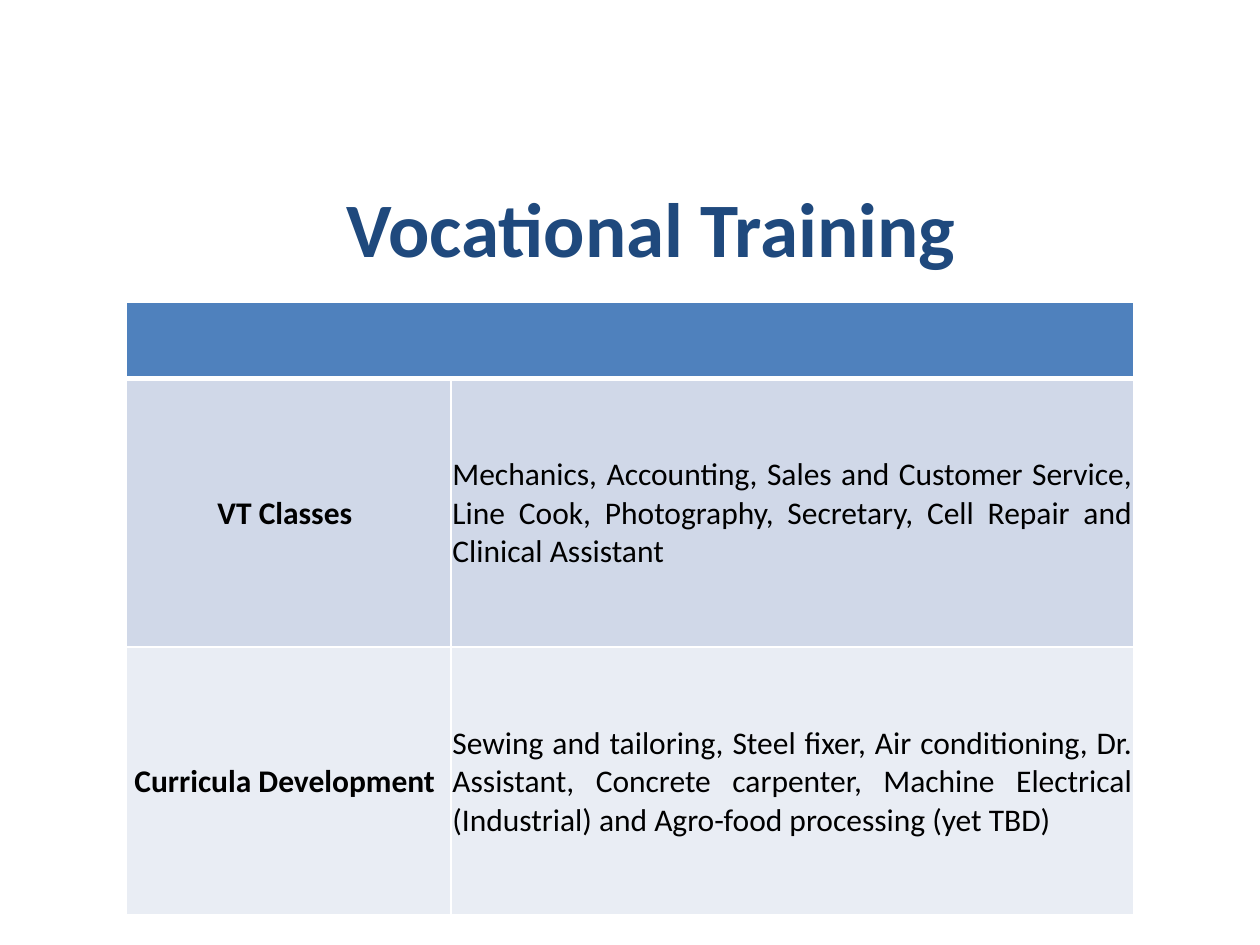
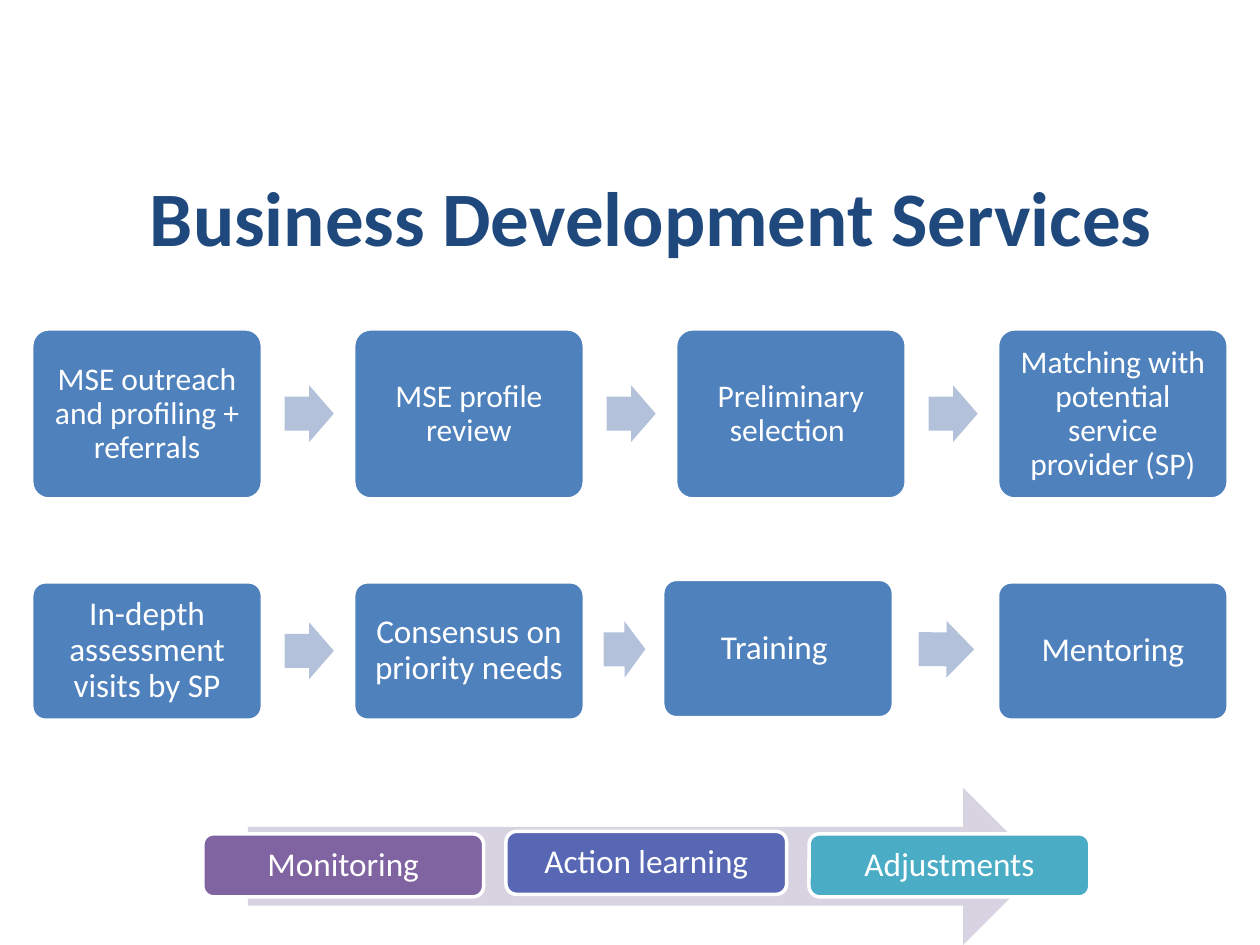
from lxml import etree
from pptx import Presentation
from pptx.dml.color import RGBColor
from pptx.enum.shapes import MSO_SHAPE
from pptx.enum.text import MSO_ANCHOR, MSO_AUTO_SIZE, PP_ALIGN
from pptx.oxml.ns import qn
from pptx.util import Cm, Pt

ROUND, ARROW = MSO_SHAPE.ROUNDED_RECTANGLE, MSO_SHAPE.RIGHT_ARROW
MIDDLE, NO_FIT = MSO_ANCHOR.MIDDLE, MSO_AUTO_SIZE.NONE
CENTER, JUSTIFY = PP_ALIGN.CENTER, PP_ALIGN.JUSTIFY
TITLE_ONLY = 5
FONT = "Calibri"
COLORS = {
    "title": "1F497D", "blue": "4F81BD", "pale": "B3C1DB",
    "band": "D0D8E8", "light": "E9EDF4", "lilac": "D8D3E0",
    "purple": "8064A2", "indigo": "5767B4", "teal": "4BACC6",
    "white": "FFFFFF", "black": "000000",
}


def rgb(name):
    return RGBColor.from_string(COLORS[name])


class Deck:
    def __init__(self):
        self.prs = Presentation()
        self.prs.slide_width, self.prs.slide_height = Cm(25.4), Cm(19.05)
        self.slide = None

    def start(self, title, box):
        """Add a slide and place its title."""
        self.slide = self.prs.slides.add_slide(self.prs.slide_layouts[TITLE_ONLY])
        head = self.slide.shapes.title
        head.left, head.top, head.width, head.height = map(Cm, box)
        head.text_frame.auto_size = NO_FIT
        self.label(head.text_frame, title, 44, "title", bold=True)

    def label(self, frame, text, size, color, bold=False, align=CENTER):
        frame.text = text
        frame.word_wrap = True
        frame.vertical_anchor = MIDDLE
        for para in frame.paragraphs:
            para.alignment = align
            for run in para.runs:
                font = run.font
                font.name, font.size, font.bold = FONT, Pt(size), bold
                font.color.rgb = rgb(color)

    def shape(self, kind, box, fill, adjust=()):
        item = self.slide.shapes.add_shape(kind, *map(Cm, box))
        item.shadow.inherit = False
        item.fill.solid()
        item.fill.fore_color.rgb = rgb(fill)
        item.line.fill.background()
        for i, value in enumerate(adjust):
            item.adjustments[i] = value
        return item

    def card(self, box, text, size, fill="blue", curve=0.1):
        item = self.shape(ROUND, box, fill, [curve])
        item.line.color.rgb = rgb("white")
        item.line.width = Pt(2)
        frame = item.text_frame
        frame.margin_left = frame.margin_right = Cm(0.28)
        frame.margin_top = frame.margin_bottom = Cm(0.28)
        self.label(frame, text, size, "white")
        frame.paragraphs[0].line_spacing = 0.9

    def arrow(self, box, turn=0):
        self.shape(ARROW, box, "pale", [0.6, 0.5]).rotation = turn

    def border(self, cell, top, bottom):
        """Draw white cell edges; only top and bottom widths vary."""
        props = cell._tc.get_or_add_tcPr()
        edges = {"a:lnL": 1, "a:lnR": 1, "a:lnT": top, "a:lnB": bottom}
        for i, (tag, width) in enumerate(edges.items()):
            line = etree.Element(qn(tag), w=str(Pt(width)))
            fill = etree.SubElement(line, qn("a:solidFill"))
            etree.SubElement(fill, qn("a:srgbClr"), val=COLORS["white"])
            props.insert(i, line)

    def table(self, spot, cols, heights, rows, fills):
        """Build a table with a merged, blank header row."""
        frame = self.slide.shapes.add_table(
            len(heights), len(cols), *map(Cm, (*spot, sum(cols), sum(heights))))
        grid = frame.table
        grid.first_row = grid.horz_banding = False
        for col, width in zip(grid.columns, cols):
            col.width = Cm(width)
        for row, height in zip(grid.rows, heights):
            row.height = Cm(height)
        grid.cell(0, 0).merge(grid.cell(0, len(cols) - 1))
        for r, (row, fill) in enumerate(zip(grid.rows, fills)):
            for c, cell in enumerate(row.cells):
                cell.fill.solid()
                cell.fill.fore_color.rgb = rgb(fill)
                self.border(cell, 3 if r == 1 else 1, 3 if r == 0 else 1)
                if r == 0:
                    continue
                cell.margin_left = cell.margin_right = cell.margin_top = Cm(0.03)
                cell.margin_bottom = 0
                self.label(cell.text_frame, rows[r - 1][c], 18, "black",
                           bold=c == 0, align=JUSTIFY if c else CENTER)
                cell.vertical_anchor = MIDDLE


def training(deck):
    deck.start("Vocational Training", (1.7, 2.97, 22.86, 3.18))
    rows = [
        ("VT Classes ",
         "Mechanics, Accounting, Sales and Customer Service, Line Cook, "
         "Photography, Secretary, Cell Repair and Clinical Assistant "),
        ("Curricula Development ",
         "Sewing and tailoring, Steel fixer, Air conditioning, Dr. Assistant, "
         "Concrete carpenter, Machine Electrical (Industrial) and Agro-food "
         "processing (yet TBD)"),
    ]
    deck.table((2.54, 6.1), (6.55, 13.77), (1.53, 5.41, 5.41), rows,
               ("blue", "band", "light"))


def services(deck):
    deck.start("Business Development Services", (2.24, 3.18, 21.79, 2.34))
    left, step, wide = 0.64, 6.49, 4.65

    # Selection steps
    steps = ["MSE outreach and profiling + referrals", "MSE profile review",
             "Preliminary selection ",
             "Matching with potential service provider (SP)"]
    for i, text in enumerate(steps):
        deck.card((left + i * step, 6.63, wide, 3.43), text, 18)
        if i < len(steps) - 1:
            deck.arrow((5.74 + i * step, 7.77, 0.99, 1.14))

    # Support steps, with the third card set slightly off the grid
    steps = [("In-depth assessment visits by SP", left, 11.73),
             ("Consensus on priority needs", left + step, 11.73),
             ("Training ", 13.36, 11.68),
             ("Mentoring", left + 3 * step, 11.73)]
    for text, x, y in steps:
        deck.card((x, y, wide, 2.79), text, 19)
    for x, y, width, turn in [(5.74, 12.55, 0.99, 0), (12.17, 12.52, 0.84, -0.4),
                              (18.52, 12.52, 1.12, 0.3)]:
        deck.arrow((x, y, width, 1.14), turn)

    # Ongoing work on a wide arrow
    deck.shape(ARROW, (5, 15.88, 16, 3.17), "lilac")
    bars = [("Monitoring", "purple", 16.81), ("Action learning", "indigo", 16.76),
            ("Adjustments", "teal", 16.81)]
    for i, (text, fill, y) in enumerate(bars):
        deck.card((4.09 + i * 6.11, y, 5.66, 1.27), text, 19, fill, 0.17)


def main():
    deck = Deck()
    training(deck)
    services(deck)
    deck.prs.save("out.pptx")


if __name__ == "__main__":
    main()
